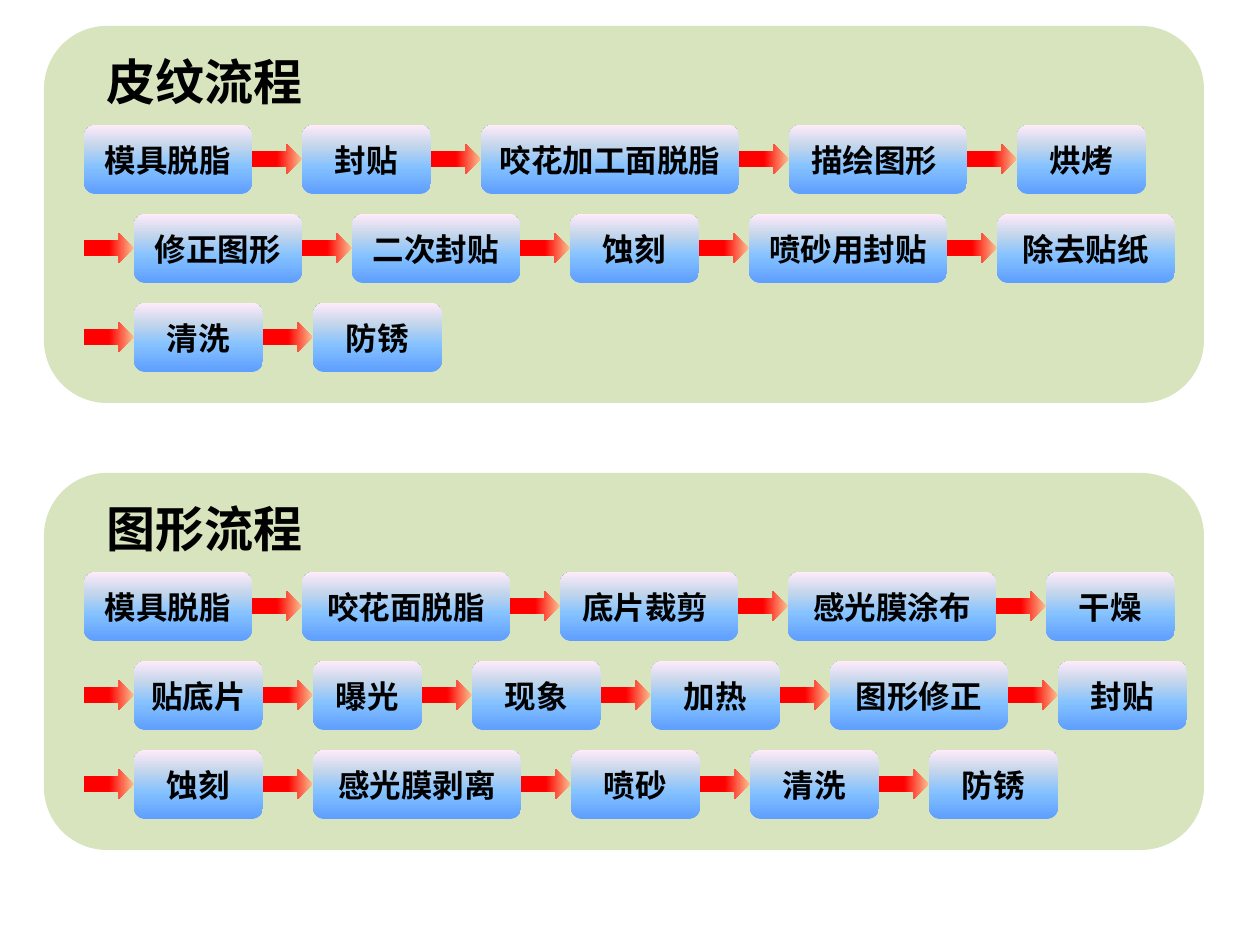
from dataclasses import dataclass

from lxml import etree
from pptx import Presentation
from pptx.dml.color import RGBColor
from pptx.enum.shapes import MSO_SHAPE
from pptx.enum.text import MSO_ANCHOR, MSO_AUTO_SIZE, PP_ALIGN
from pptx.oxml.ns import qn
from pptx.util import Emu, Pt

ROUNDED = MSO_SHAPE.ROUNDED_RECTANGLE
ARROW = MSO_SHAPE.RIGHT_ARROW
MIDDLE = MSO_ANCHOR.MIDDLE
FIT_SHAPE = MSO_AUTO_SIZE.SHAPE_TO_FIT_TEXT
CENTER = PP_ALIGN.CENTER

EMU_PER_PX = 914400 // 126
BLANK_LAYOUT = 6


@dataclass(frozen=True)
class Theme:
    font: str = "Calibri"
    text: str = "000000"
    panel: str = "D7E4BD"
    step_stops: tuple = ((0, "5E9EFF"), (40, "85C2FF"), (70, "C4D6EB"), (100, "FFEBFA"))
    arrow_stops: tuple = ((0, "FAC090"), (50, "FF0000"))
    heading_size: int = 28
    step_size: int = 18


THEME = Theme()

PANEL_LEFT, PANEL_TOP, PANEL_WIDTH, PANEL_HEIGHT = 44, 26, 1160, 377
PANEL_PITCH = 447
HEADING_LEFT, HEADING_DROP, HEADING_WIDTH, HEADING_HEIGHT = 94, 19, 224, 72
ROW_LEFT, ROW_DROP, ROW_PITCH = 84, 99, 89
STEP_HEIGHT = 69
ARROW_WIDTH, ARROW_HEIGHT = 50, 30

# Each flow: heading, then rows of (step, box width).
FLOWS = [
    ("皮纹流程", [
        [("模具脱脂", 168), ("封贴", 129), ("咬花加工面脱脂", 258), ("描绘图形 ", 178), ("烘烤", 129)],
        [("修正图形", 168), ("二次封贴", 168), ("蚀刻", 129), ("喷砂用封贴", 198), ("除去贴纸", 178)],
        [("清洗", 129), ("防锈", 129)],
    ]),
    ("图形流程", [
        [("模具脱脂", 168), ("咬花面脱脂", 208), ("底片裁剪 ", 178), ("感光膜涂布", 208), ("干燥", 129)],
        [("贴底片", 129), ("曝光", 109), ("现象", 129), ("加热", 129), ("图形修正", 178), ("封贴", 129)],
        [("蚀刻", 129), ("感光膜剥离", 208), ("喷砂", 129), ("清洗", 129), ("防锈", 129)],
    ]),
]


def px(*lengths):
    return [Emu(length * EMU_PER_PX) for length in lengths]


def add_plain_shape(shapes, kind, left, top, width, height):
    shape = shapes.add_shape(kind, *px(left, top, width, height))
    shape.shadow.inherit = False
    shape.line.fill.background()
    return shape


def fill_gradient(shape, stops, angle):
    """Fill with (percent, colour) stops; the angle runs counter-clockwise."""
    shape.fill.gradient()
    shape.fill.gradient_angle = angle
    stop_list = shape._element.spPr.find(qn("a:gradFill")).find(qn("a:gsLst"))
    for old_stop in list(stop_list):
        stop_list.remove(old_stop)
    for percent, colour in stops:
        stop = etree.SubElement(stop_list, qn("a:gs"), pos=str(percent * 1000))
        etree.SubElement(stop, qn("a:srgbClr"), val=colour)


def write_text(frame, text, size):
    para = frame.paragraphs[0]
    para.text = text
    para.font.name = THEME.font
    para.font.size = Pt(size)
    para.font.bold = True
    para.font.color.rgb = RGBColor.from_string(THEME.text)
    return para


def add_panel(shapes, top):
    panel = add_plain_shape(shapes, ROUNDED, PANEL_LEFT, top, PANEL_WIDTH, PANEL_HEIGHT)
    panel.fill.solid()
    panel.fill.fore_color.rgb = RGBColor.from_string(THEME.panel)


def add_heading(shapes, text, top):
    box = shapes.add_textbox(*px(HEADING_LEFT, top, HEADING_WIDTH, HEADING_HEIGHT))
    box.text_frame.word_wrap = False
    box.text_frame.auto_size = FIT_SHAPE
    write_text(box.text_frame, text, THEME.heading_size)


def add_step(shapes, text, left, top, width):
    box = add_plain_shape(shapes, ROUNDED, left, top, width, STEP_HEIGHT)
    fill_gradient(box, THEME.step_stops, 90)
    box.text_frame.vertical_anchor = MIDDLE
    write_text(box.text_frame, text, THEME.step_size).alignment = CENTER


def add_arrow(shapes, left, row_top):
    top = row_top + (STEP_HEIGHT - ARROW_HEIGHT) // 2
    arrow = add_plain_shape(shapes, ARROW, left, top, ARROW_WIDTH, ARROW_HEIGHT)
    fill_gradient(arrow, THEME.arrow_stops, 180)


def add_flow(shapes, heading, rows, top):
    """Draw a panel whose steps are all joined by arrows, row after row."""
    add_panel(shapes, top)
    add_heading(shapes, heading, top + HEADING_DROP)
    for row_index, row in enumerate(rows):
        left = ROW_LEFT
        row_top = top + ROW_DROP + row_index * ROW_PITCH
        for step_index, (text, width) in enumerate(row):
            if row_index or step_index:
                add_arrow(shapes, left, row_top)
                left += ARROW_WIDTH
            add_step(shapes, text, left, row_top, width)
            left += width


def main():
    deck = Presentation()
    deck.slide_width, deck.slide_height = px(1260, 945)
    slide = deck.slides.add_slide(deck.slide_layouts[BLANK_LAYOUT])
    for index, (heading, rows) in enumerate(FLOWS):
        group = slide.shapes.add_group_shape()
        add_flow(group.shapes, heading, rows, PANEL_TOP + index * PANEL_PITCH)
    deck.save("out.pptx")


if __name__ == "__main__":
    main()
